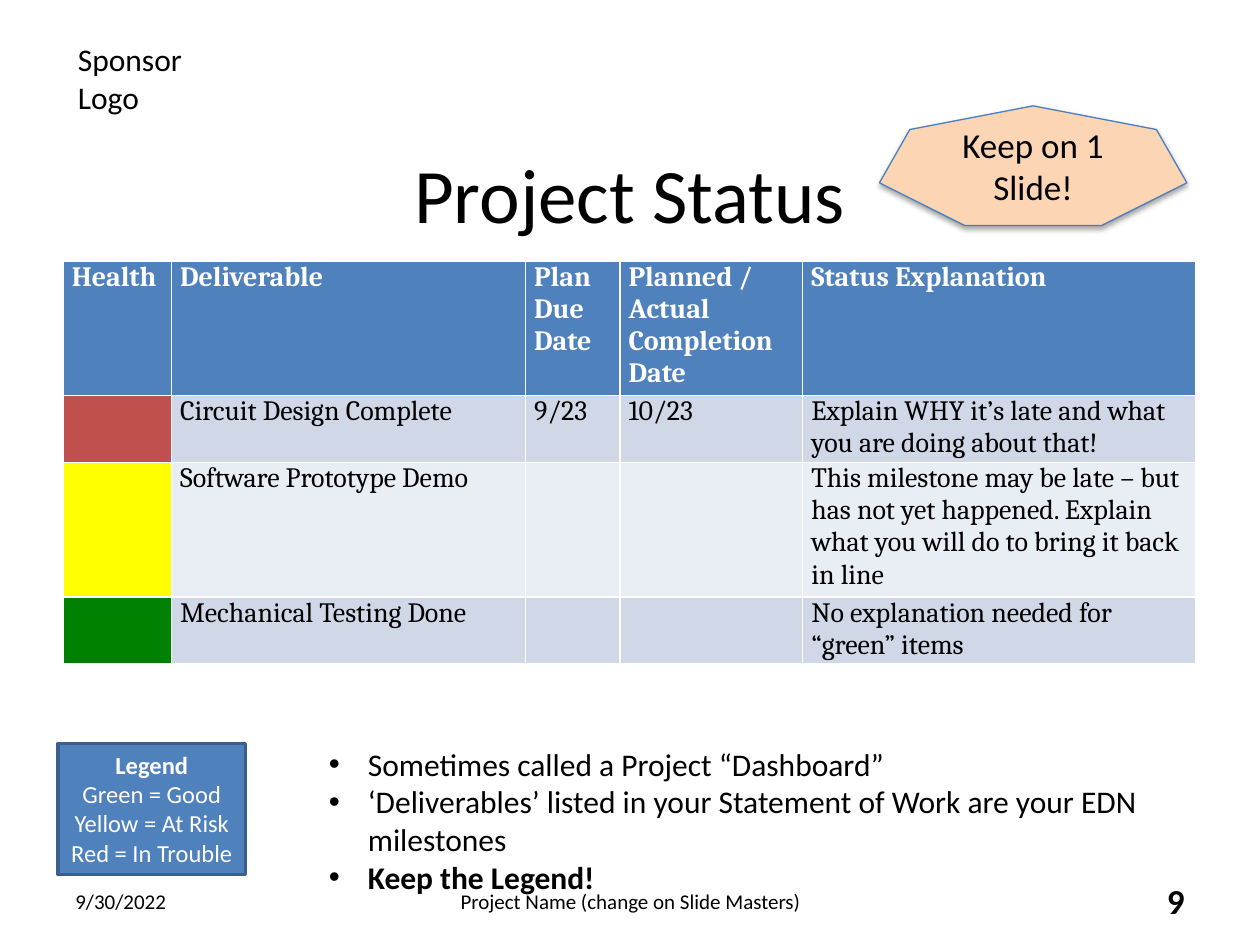
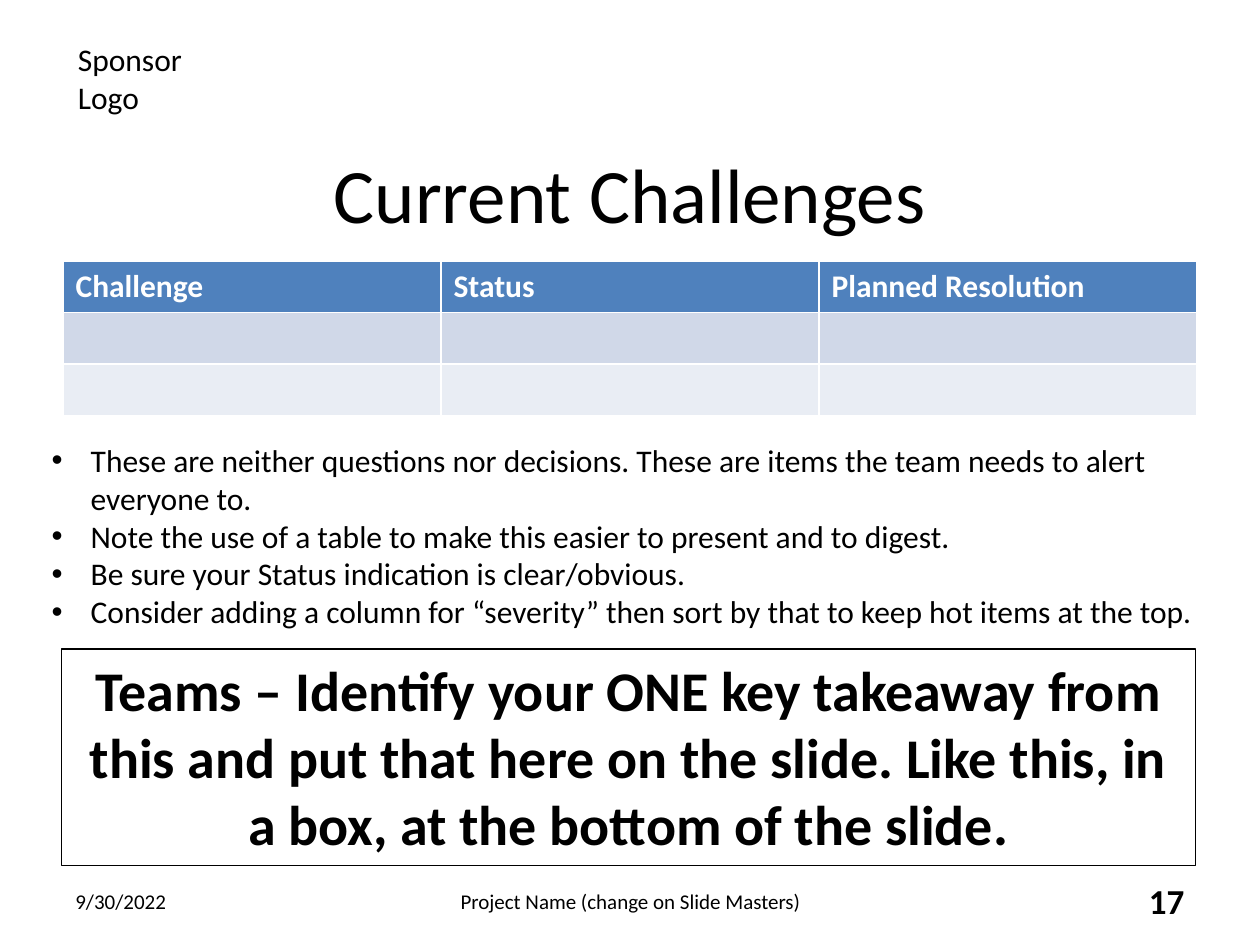
"""Build the project status and current challenges slides."""
from dataclasses import dataclass

from lxml.etree import SubElement
from pptx import Presentation
from pptx.dml.color import RGBColor
from pptx.enum.shapes import MSO_SHAPE
from pptx.enum.text import MSO_ANCHOR, MSO_AUTO_SIZE, PP_ALIGN
from pptx.oxml.ns import qn
from pptx.util import Inches, Pt


@dataclass(frozen=True)
class Theme:
    font: str = "Calibri"
    table_font: str = "Cambria"
    black: str = "000000"
    white: str = "FFFFFF"
    blue: str = "4F81BD"
    legend_edge: str = "3A5F8C"
    callout_edge: str = "4B7EBC"
    peach: str = "FCD5B5"
    red: str = "C0504D"
    yellow: str = "FFFF00"
    green: str = "008000"
    bands: tuple = ("D0D8E8", "E9EDF4")
    title_size: int = 44
    takeaway_size: int = 32
    large_size: int = 20
    text_size: int = 18
    status_size: int = 16
    legend_size: int = 14
    footer_size: int = 12


theme = Theme()


def write(frame, text, size=theme.text_size, font=theme.font, color=theme.black, bold=False,
          align=PP_ALIGN.LEFT, anchor=MSO_ANCHOR.TOP, wrap=True, indent=None):
    """Fill a text frame, one paragraph per line of text."""
    frame.text = text
    frame.word_wrap = wrap
    frame.vertical_anchor = anchor
    frame.auto_size = MSO_AUTO_SIZE.NONE
    for para in frame.paragraphs:
        para.alignment = align
        para.space_before = Pt(0)
        if indent:
            properties = para._p.get_or_add_pPr()
            properties.set("marL", str(Inches(indent)))
            properties.set("indent", str(-Inches(indent)))
        for span in para.runs:
            span.font.name = font
            span.font.size = Pt(size)
            span.font.bold = bold
            span.font.color.rgb = RGBColor.from_string(color)


def add_grid(page, rows, widths, heights, size, font, margins=None):
    """Add a table with a blue header row and banded rows below it."""
    table = page.shapes.add_table(len(rows), len(widths), Inches(0.5), Inches(2.07),
                                  Inches(sum(widths)), Inches(sum(heights))).table
    for column, width in zip(table.columns, widths):
        column.width = Inches(width)
    for index, (row, height, texts) in enumerate(zip(table.rows, heights, rows)):
        row.height = Inches(height)
        for cell, text in zip(row.cells, texts):
            fill = theme.bands[(index - 1) % 2] if index else theme.blue
            cell.fill.solid()
            cell.fill.fore_color.rgb = RGBColor.from_string(fill)
            if margins:
                cell.margin_left = cell.margin_right = Inches(margins[0])
                cell.margin_top = cell.margin_bottom = Inches(margins[1])
            if text:
                write(cell.text_frame, text, size=size, font=font, bold=index == 0,
                      color=theme.black if index else theme.white)
    return table


deck = Presentation()
deck.slide_width, deck.slide_height = Inches(10), Inches(7.5)

footer = dict(size=theme.footer_size, anchor=MSO_ANCHOR.MIDDLE)
pages = []
for title, number, bullets, bullet_area in (
    ("Project Status", "9",
     ("Sometimes called a Project “Dashboard”",
      "‘Deliverables’ listed in your Statement of Work are your EDN milestones",
      "Keep the Legend!"),
     (2.51, 5.86, 7.33, 1.31)),
    ("Current Challenges", "17",
     ("These are neither questions nor decisions. These are items the team needs to alert "
      "everyone to.",
      "Note the use of a table to make this easier to present and to digest.",
      "Be sure your Status indication is clear/obvious.",
      "Consider adding a column for “severity” then sort by that to keep hot items at the top."),
     (0.31, 3.45, 9.37, 1.62)),
):
    page = deck.slides.add_slide(deck.slide_layouts[1])
    pages.append(page)
    heading, body = page.placeholders
    for holder, area in ((heading, (0.5, 1.12, 9, 0.82)), (body, bullet_area)):
        holder.left, holder.top, holder.width, holder.height = map(Inches, area)
    write(heading.text_frame, title, size=theme.title_size, align=PP_ALIGN.CENTER,
          anchor=MSO_ANCHOR.MIDDLE)
    write(body.text_frame, "\n".join(bullets), indent=0.31)
    for text, area, style in (
        ("Sponsor\vLogo", (0.52, 0.27, 1.53, 0.71), {}),
        ("9/30/2022", (0.5, 6.95, 2.33, 0.4), footer),
        ("Project Name (change on Slide Masters)", (3.42, 6.95, 3.17, 0.4),
         footer | dict(align=PP_ALIGN.CENTER)),
        (number, (7.17, 6.95, 2.33, 0.4),
         footer | dict(align=PP_ALIGN.RIGHT, size=theme.large_size, bold=True)),
    ):
        box = page.shapes.add_textbox(*map(Inches, area))
        write(box.text_frame, text, **style)

status_page, challenge_page = pages

status_page.placeholders[1].text_frame.paragraphs[-1].runs[0].font.bold = True
status_rows = (
    ("Health", "Deliverable", "Plan\nDue\nDate", "Planned / Actual\nCompletion\nDate",
     "Status Explanation"),
    ("", "Circuit Design Complete", "9/23", "10/23",
     "Explain WHY it’s late and what you are doing about that!"),
    ("", "Software Prototype Demo", "", "",
     "This milestone may be late – but has not yet happened. "
     "Explain what you will do to bring it back in line"),
    ("", "Mechanical Testing Done", "", "", "No explanation needed for “green” items"),
)
status_table = add_grid(status_page, status_rows, (0.86, 2.81, 0.75, 1.45, 3.12),
                        (1.07, 0.53, 1.07, 0.53), theme.status_size, theme.table_font,
                        margins=(0.07, 0))
for index, health in enumerate((theme.red, theme.yellow, theme.green), 1):
    status_table.cell(index, 0).fill.fore_color.rgb = RGBColor.from_string(health)

add_grid(challenge_page, (("Challenge", "Status", "Planned Resolution"), [""] * 3, [""] * 3),
         [3] * 3, [0.41] * 3, theme.text_size, theme.font)

panels = []
for page, kind, area, fill, edge, weight, text, style in (
    (status_page, MSO_SHAPE.RECTANGLE, (0.46, 5.9, 1.49, 1.04), theme.blue, theme.legend_edge, 2,
     "Legend\nGreen = Good\nYellow = At Risk\nRed = In Trouble",
     dict(size=theme.legend_size, color=theme.white, wrap=False)),
    (status_page, MSO_SHAPE.HEPTAGON, (6.98, 0.84, 2.44, 0.95), theme.peach, theme.callout_edge,
     0.75, "Keep on 1 Slide!", dict(size=theme.large_size, anchor=MSO_ANCHOR.MIDDLE)),
    (challenge_page, MSO_SHAPE.RECTANGLE, (0.49, 5.15, 9, 1.72), None, theme.black, 0.75,
     "Teams – Identify your ONE key takeaway from this and put that here on the slide. "
     "Like this, in a box, at the bottom of the slide.",
     dict(size=theme.takeaway_size, bold=True)),
):
    panel = page.shapes.add_shape(kind, *map(Inches, area))
    panels.append(panel)
    panel.shadow.inherit = False
    if fill:
        panel.fill.solid()
        panel.fill.fore_color.rgb = RGBColor.from_string(fill)
    else:
        panel.fill.background()
    panel.line.color.rgb = RGBColor.from_string(edge)
    panel.line.width = Pt(weight)
    write(panel.text_frame, text, align=PP_ALIGN.CENTER, **style)

legend, callout, takeaway = panels
legend.text_frame.paragraphs[0].runs[0].font.bold = True
effects = callout._element.spPr.find(qn("a:effectLst"))
shadow = SubElement(effects, qn("a:outerShdw"), blurRad=str(Pt(3.1)), dist=str(Pt(1.8)),
                    dir="5400000", rotWithShape="0")
shade = SubElement(shadow, qn("a:srgbClr"), val=theme.black)
SubElement(shade, qn("a:alpha"), val="35000")

deck.save("out.pptx")
